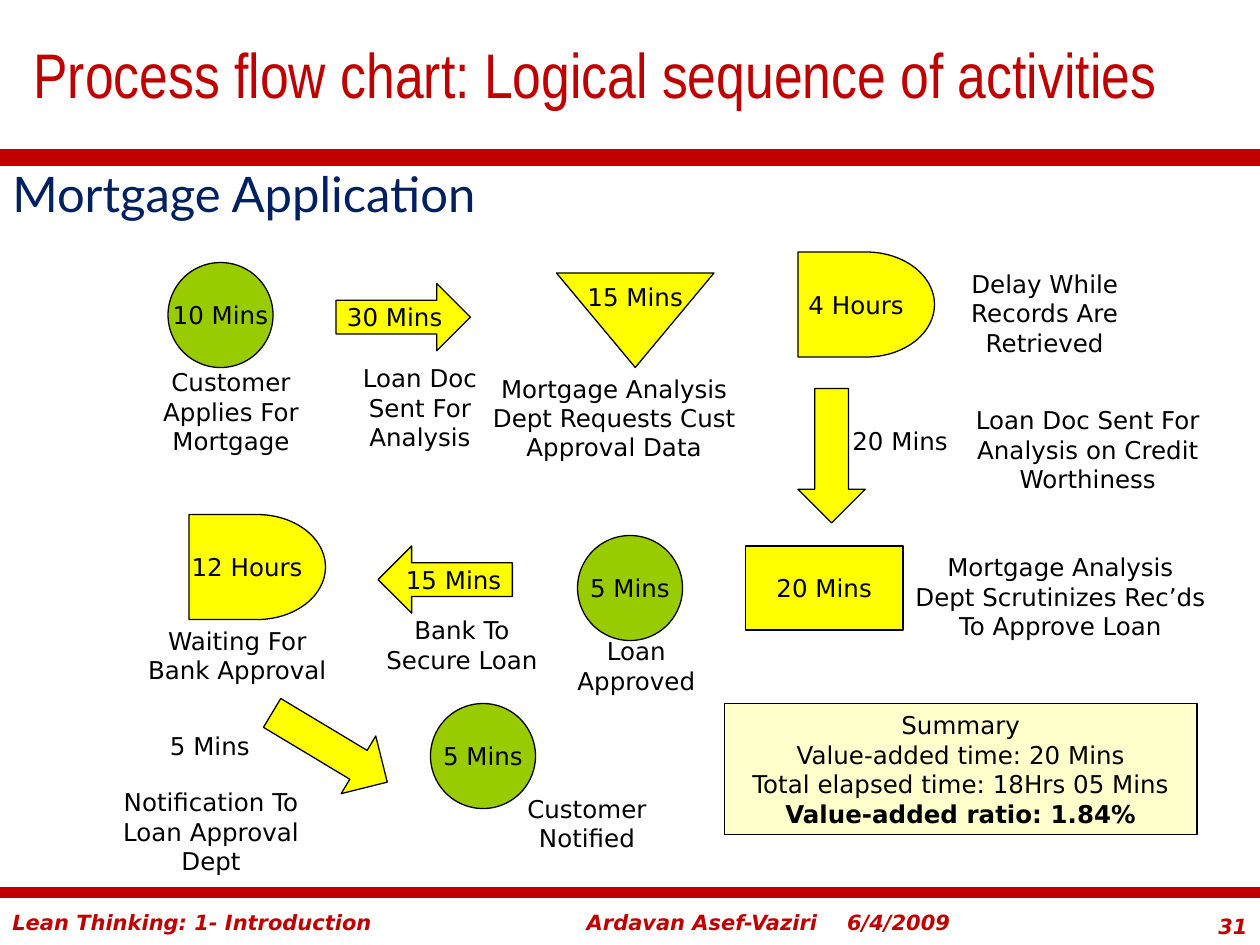
from dataclasses import dataclass

from lxml.etree import SubElement
from pptx import Presentation
from pptx.dml.color import RGBColor
from pptx.enum.shapes import MSO_CONNECTOR, MSO_SHAPE as Preset
from pptx.enum.text import MSO_ANCHOR as Anchor, MSO_AUTO_SIZE as AutoSize, PP_ALIGN as Align
from pptx.oxml.ns import qn
from pptx.util import Emu, Inches, Pt

COLUMNS = 120
SLIDE_WIDTH, SLIDE_HEIGHT = Inches(10), Inches(7.5)
CELL = SLIDE_WIDTH / COLUMNS


@dataclass(frozen=True)
class Theme:
    red: str = "C00000"
    navy: str = "002060"
    black: str = "000000"
    green: str = "99CC00"
    yellow: str = "FFFF00"
    title_font: str = "Arial Narrow"
    subtitle_font: str = "Lato"
    body_font: str = "DejaVu Sans"
    title_size: int = 36
    subtitle_size: int = 28
    body_size: int = 14
    footer_size: int = 12
    outline: float = 0.75


THEME = Theme()


@dataclass(frozen=True)
class Symbol:
    preset: Preset
    width: float
    height: float
    fill: str = THEME.yellow


OPERATION = Symbol(Preset.FLOWCHART_CONNECTOR, 10, 10, THEME.green)
INSPECTION = Symbol(Preset.FLOWCHART_PROCESS, 15, 8)
TRANSPORT = Symbol(Preset.RIGHT_ARROW, 12.8, 6.4)
STORAGE = Symbol(Preset.FLOWCHART_EXTRACT, 15, 9)
DELAY = Symbol(Preset.FLOWCHART_DELAY, 13, 10)
SUMMARY = Symbol(Preset.RECTANGLE, 45, 12.5)


@dataclass(frozen=True)
class Step:
    symbol: Symbol
    column: float
    row: float
    text: str = ""
    rotation: int = 0


@dataclass(frozen=True)
class Label:
    text: str
    column: float
    row: float
    width: float
    lines: int
    align: Align = Align.CENTER


@dataclass(frozen=True)
class Footer:
    text: str
    column: float
    row: float
    width: float
    align: Align = Align.LEFT


STEPS = [
    Step(OPERATION, 41, 67, "5 Mins"),
    Step(OPERATION, 55, 51, "5 Mins"),
    Step(OPERATION, 16, 25, "10 Mins"),
    Step(INSPECTION, 71, 52, "20 Mins"),
    Step(TRANSPORT, 36, 52, "15 Mins", 180),
    Step(TRANSPORT, 25, 68, rotation=31),
    Step(TRANSPORT, 72.8, 40.2, rotation=90),
    Step(TRANSPORT, 32, 27, "30 Mins"),
    Step(STORAGE, 53, 26, "15 Mins", 180),
    Step(DELAY, 18, 49, "12 Hours"),
    Step(DELAY, 76, 24, "4 Hours"),
]

LABELS = [
    Label("20 Mins", 80, 40, 15, 1, Align.LEFT),
    Label("5 Mins", 15, 69, 11.2, 1, Align.LEFT),
    Label("Customer Applies For Mortgage", 14, 34.4, 16, 3),
    Label("Loan Doc Sent For Analysis", 31, 34, 18, 3),
    Label("Mortgage Analysis Dept Requests Cust Approval Data", 44, 35, 29, 3),
    Label("Delay While Records Are Retrieved", 88, 25, 23, 3),
    Label("Loan Doc Sent For Analysis on Credit Worthiness", 90, 38, 27.2, 3),
    Label("Mortgage Analysis Dept Scrutinizes Rec’ds To Approve Loan", 86, 52, 30, 3),
    Label("Loan Approved", 52, 60, 17.2, 2),
    Label("Bank To Secure Loan", 35, 58, 18, 2),
    Label("Waiting For Bank Approval", 12, 59, 21.2, 2),
    Label("Notification To Loan Approval Dept", 10, 74.4, 20.2, 3),
    Label("Customer Notified", 47.8, 75, 16.2, 2),
]

FOOTERS = [
    Footer("Lean Thinking: 1- Introduction", 0, 86, 54),
    Footer("Ardavan Asef-Vaziri", 54.7, 86, 26),
    Footer("6/4/2009", 79.5, 86, 15),
    Footer("31", 111, 86.4, 9, Align.RIGHT),
]

SUMMARY_TEXT = "\n".join([
    "Summary",
    "Value-added time: 20 Mins",
    "Total elapsed time: 18Hrs 05 Mins",
    "Value-added ratio: 1.84%",
])


def cells(*counts: float) -> list[Emu]:
    return [Emu(round(count * CELL)) for count in counts]


def write(text_frame, text: str, align: Align = Align.CENTER, size: int = THEME.body_size,
          font: str = THEME.body_font, color: str = THEME.black, strong: bool = False) -> None:
    text_frame.text = text
    for paragraph in text_frame.paragraphs:
        paragraph.alignment = align
        for run in paragraph.runs:
            run.font.name = font
            run.font.size = Pt(size)
            run.font.color.rgb = RGBColor.from_string(color)
            if strong:
                run.font.bold = run.font.italic = True


def add_text(slide, column: float, row: float, width: float, height: float, text: str, **style):
    text_box = slide.shapes.add_textbox(*cells(column, row, width, height))
    text_box.text_frame.word_wrap = True
    write(text_box.text_frame, text, **style)
    return text_box


def add_step(slide, step: Step):
    symbol = step.symbol
    shape = slide.shapes.add_shape(
        symbol.preset, *cells(step.column, step.row, symbol.width, symbol.height))
    shape.shadow.inherit = False
    shape.rotation = step.rotation
    shape.fill.solid()
    shape.fill.fore_color.rgb = RGBColor.from_string(symbol.fill)
    shape.line.color.rgb = RGBColor.from_string(THEME.black)
    shape.line.width = Pt(THEME.outline)
    if step.text:
        shape.text_frame.word_wrap = False
        shape.text_frame.vertical_anchor = Anchor.MIDDLE
        write(shape.text_frame, step.text)
        if step.rotation:
            body = shape.text_frame._txBody.find(qn("a:bodyPr"))
            body.set("rot", str(step.rotation * 60000))
    return shape


def add_rule(slide, row: float, weight: float) -> None:
    rule = slide.shapes.add_connector(MSO_CONNECTOR.STRAIGHT, *cells(0, row, COLUMNS, row))
    rule.line.color.rgb = RGBColor.from_string(THEME.red)
    rule.line.width = Pt(weight)
    SubElement(rule._element.spPr, qn("a:effectLst"))


def add_summary(slide) -> None:
    shape = add_step(slide, Step(SUMMARY, 69, 67, SUMMARY_TEXT))
    shape.text_frame.word_wrap = True
    shape.text_frame.paragraphs[-1].runs[0].font.bold = True
    color = shape._element.spPr.find(qn("a:solidFill"))[0]
    SubElement(color, qn("a:alpha")).set("val", "20000")


def set_title(slide) -> None:
    title = slide.shapes.title
    title.left, title.top, title.width, title.height = cells(2, 0, 118, 14)
    title.text_frame.auto_size = AutoSize.NONE
    title.text_frame.vertical_anchor = Anchor.MIDDLE
    write(title.text_frame, "Process flow chart: Logical sequence of activities",
          Align.LEFT, THEME.title_size, THEME.title_font, THEME.red)


def main() -> None:
    presentation = Presentation()
    presentation.slide_width, presentation.slide_height = SLIDE_WIDTH, SLIDE_HEIGHT
    slide = presentation.slides.add_slide(presentation.slide_layouts[5])
    set_title(slide)
    for footer in FOOTERS:
        add_text(slide, footer.column, footer.row, footer.width, 3.6, footer.text,
                 align=footer.align, size=THEME.footer_size, color=THEME.red, strong=True)
    add_rule(slide, 15, 10)
    add_rule(slide, 85, 6)
    add_text(slide, 0, 15, 108, 8, "Mortgage Application", align=Align.LEFT,
             size=THEME.subtitle_size, font=THEME.subtitle_font, color=THEME.navy)
    for step in STEPS:
        add_step(slide, step)
    for label in LABELS:
        add_text(slide, label.column, label.row, label.width, 1.2 + 2.8 * label.lines,
                 label.text, align=label.align)
    add_summary(slide)
    presentation.save("out.pptx")


if __name__ == "__main__":
    main()
